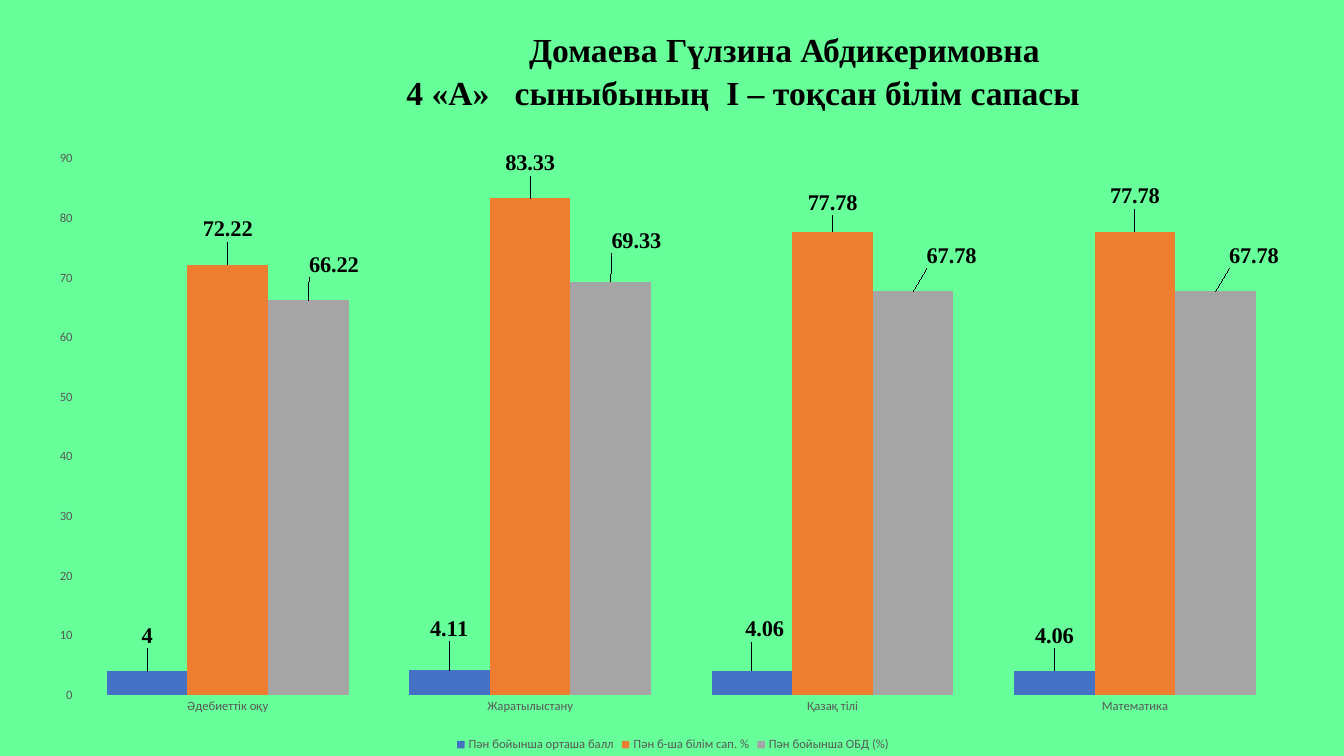
from lxml import etree
from pptx import Presentation
from pptx.chart.data import CategoryChartData
from pptx.dml.color import RGBColor
from pptx.enum.chart import XL_CHART_TYPE, XL_LABEL_POSITION, XL_LEGEND_POSITION, XL_TICK_MARK
from pptx.enum.text import MSO_ANCHOR, PP_ALIGN
from pptx.oxml.ns import qn
from pptx.util import Inches, Pt

CLUSTERED = XL_CHART_TYPE.COLUMN_CLUSTERED
OUTSIDE_END = XL_LABEL_POSITION.OUTSIDE_END
BOTTOM = XL_LEGEND_POSITION.BOTTOM
NO_TICK = XL_TICK_MARK.NONE
MIDDLE = MSO_ANCHOR.MIDDLE
CENTER = PP_ALIGN.CENTER

MINT = RGBColor(0x66, 0xFF, 0x99)
BLACK = RGBColor(0x00, 0x00, 0x00)
GRAY = RGBColor(0x59, 0x59, 0x59)
BLUE = RGBColor(0x44, 0x72, 0xC4)
ORANGE = RGBColor(0xED, 0x7D, 0x31)
SILVER = RGBColor(0xA5, 0xA5, 0xA5)

SERIF = "Times New Roman"
SANS = "Calibri"
SLIDE_W, SLIDE_H = Inches(13.33), Inches(7.5)

TITLE_BOX = (28.88, 3.07, 52.81, 12.13)
CHART_BOX = (2.55, 18.4, 95.05, 81.6)
NAME_INDENT = Inches(0.82)

TITLE_LINES = [
    (NAME_INDENT, [("Домаева Гүлзина Абдикеримовна", 0)]),
    (0, [("4 «А»", 0), (" ", 12), ("сыныбының", 0), (" ", 6),
         ("І – тоқсан білім сапасы", 0)]),
]
SUBJECTS = ["Әдебиеттік оқу", "Жаратылыстану", "Қазақ тілі", "Математика"]
SERIES = [
    ("Пән бойынша орташа балл", BLUE, [4, 4.11, 4.06, 4.06],
     [(0, -0.03), (0, -0.04), (0.01, -0.04), (0, -0.03)]),
    ("Пән б-ша білім сап. %", ORANGE, [72.22, 83.33, 77.78, 77.78],
     [(0, -0.03), (0, -0.03), (0, -0.02), (0, -0.03)]),
    ("Пән бойынша ОБД (%)", SILVER, [66.22, 69.33, 67.78, 67.78],
     [(0.02, -0.03), (0.02, -0.04), (0.03, -0.03), (0.03, -0.03)]),
]


def share(left, top, width, height):
    return (int(SLIDE_W * left / 100), int(SLIDE_H * top / 100),
            int(SLIDE_W * width / 100), int(SLIDE_H * height / 100))


def set_font(font, name, size, color, bold=False):
    font.name, font.size, font.bold = name, Pt(size), bold
    font.color.rgb = color


def fill_title(sp):
    sp.left, sp.top, sp.width, sp.height = share(*TITLE_BOX)
    tf = sp.text_frame
    tf.word_wrap = True
    tf.vertical_anchor = MIDDLE
    for i, (indent, pieces) in enumerate(TITLE_LINES):
        p = tf.add_paragraph() if i else tf.paragraphs[0]
        p.alignment = CENTER
        p.line_spacing = 1.07
        p._p.get_or_add_pPr().set("marL", str(indent))
        for text, spacing in pieces:
            r = p.add_run()
            r.text = text
            set_font(r.font, SERIF, 24, BLACK, True)
            if spacing:
                r._r.get_or_add_rPr().set("spc", str(spacing * 100))


def shift_label(idx, dx, dy):
    layout = etree.Element(qn("c:layout"))
    manual = etree.SubElement(layout, qn("c:manualLayout"))
    for axis, value in (("x", dx), ("y", dy)):
        etree.SubElement(manual, qn(f"c:{axis}")).set("val", str(value))
    idx.addnext(layout)


def format_labels(series, shifts):
    labels = series.data_labels
    labels.show_value = True
    labels.position = OUTSIDE_END
    set_font(labels.font, SERIF, 16, BLACK, True)
    for i in range(len(shifts)):
        label = series.points[i].data_label
        set_font(label.font, SERIF, 16, BLACK, True)
        label.position = OUTSIDE_END
    marks = series._element.findall(f".//{qn('c:dLbl')}/{qn('c:idx')}")
    for idx, shift in zip(marks, shifts):
        shift_label(idx, *shift)


def format_axis(axis):
    axis.has_major_gridlines = False
    axis.major_tick_mark = axis.minor_tick_mark = NO_TICK
    axis.format.line.fill.background()
    set_font(axis.tick_labels.font, SANS, 9, GRAY)


def add_grades_chart(s):
    data = CategoryChartData()
    data.categories = SUBJECTS
    for name, _, values, _ in SERIES:
        data.add_series(name, values)
    chart = s.shapes.add_chart(CLUSTERED, *share(*CHART_BOX), data).chart
    set_font(chart.font, SANS, 10, BLACK)
    chart.has_title = False
    chart.has_legend = True
    chart.legend.position = BOTTOM
    chart.legend.include_in_layout = False
    set_font(chart.legend.font, SANS, 9, GRAY)

    format_axis(chart.category_axis)
    format_axis(chart.value_axis)
    chart.value_axis.minimum_scale = 0
    chart.value_axis.maximum_scale = 90
    chart.value_axis.major_unit = 10

    plot = chart.plots[0]
    plot.vary_by_categories = False
    plot.gap_width = 75
    plot.overlap = 0
    for series, (_, color, _, shifts) in zip(plot.series, SERIES):
        series.format.fill.solid()
        series.format.fill.fore_color.rgb = color
        format_labels(series, shifts)


def main():
    prs = Presentation()
    prs.slide_width, prs.slide_height = SLIDE_W, SLIDE_H
    s = prs.slides.add_slide(prs.slide_layouts[5])
    s.background.fill.solid()
    s.background.fill.fore_color.rgb = MINT
    fill_title(s.shapes.title)
    add_grades_chart(s)
    prs.save("out.pptx")


if __name__ == "__main__":
    main()
